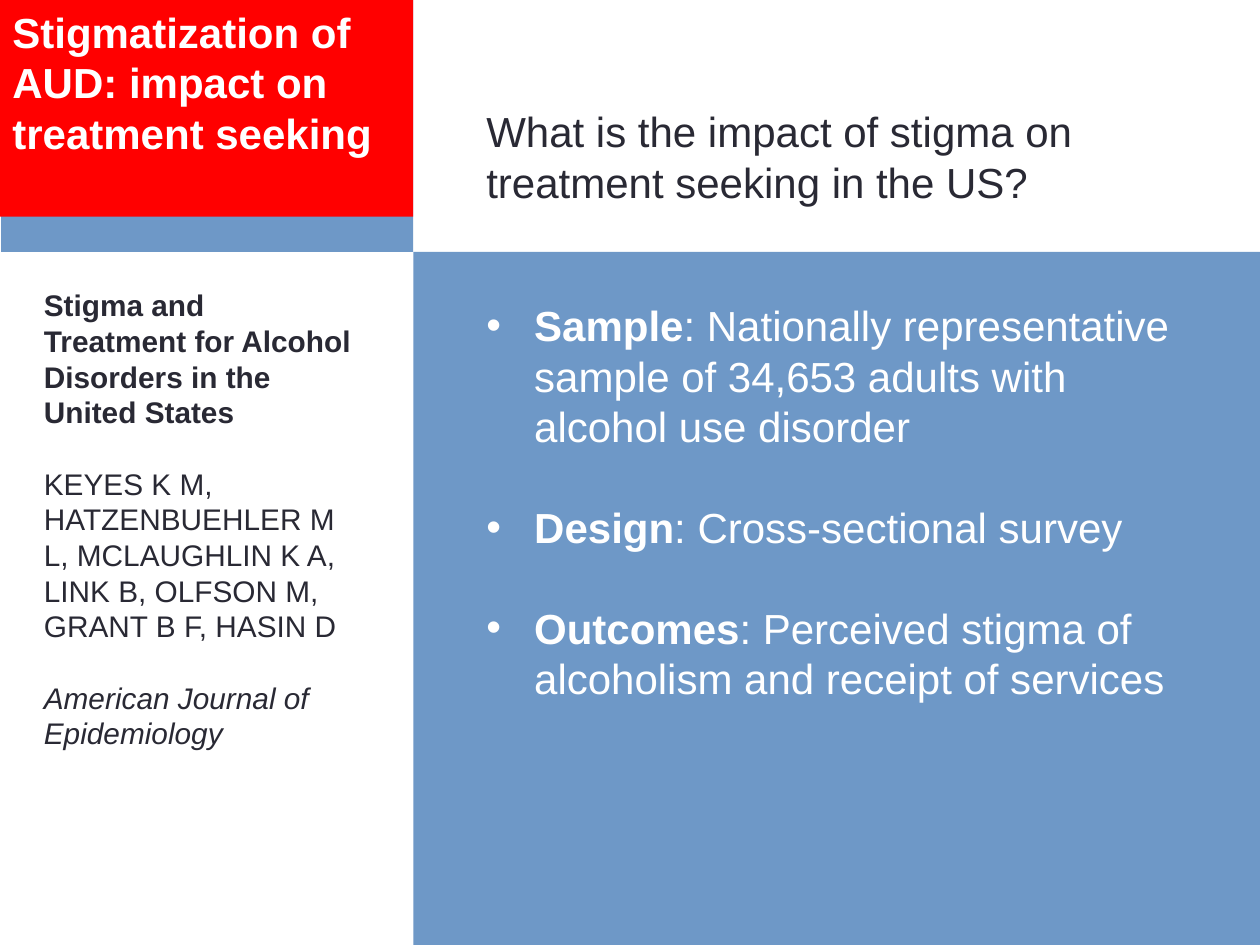
from dataclasses import dataclass

from lxml import etree
from pptx import Presentation
from pptx import util as u
from pptx.dml.color import RGBColor
from pptx.enum import shapes, text
from pptx.oxml import ns


@dataclass(frozen=True)
class Theme:
    font: str = "Arial"
    large: int = 24
    small: int = 17
    leading: float = 1.2
    red: str = "FF0000"
    blue: str = "6E98C7"
    white: str = "FFFFFF"
    dark: str = "292934"


THEME = Theme()
WIDTH, HEIGHT = 10, 7.5
SIDEBAR = 3.28       # width of the left column
HEADER = 2           # height of the top row
BANNER = 1.72        # red part of the top row
CONTENT = 3.76       # left edge of the main text
HANG = 0.38

# Each paragraph is a list of (wording, style) spans.
TOPIC = [[("Stigmatization of AUD: impact on treatment seeking", "bold")]]
QUESTION = [[("What is the impact of stigma on treatment seeking in the US?", "")]]
STUDY = [
    [("Sample", "bold"),
     (": Nationally representative sample of 34,653 adults with alcohol use disorder", "")],
    [("Design", "bold"), (": Cross-sectional survey", "")],
    [("Outcomes", "bold"), (": Perceived stigma of alcoholism and receipt of services", "")],
]
CITATION = [
    [("Stigma and Treatment for Alcohol Disorders in the United States", "bold")],
    [("KEYES K M, HATZENBUEHLER M L, MCLAUGHLIN K A, LINK B, OLFSON M, "
      "GRANT B F, HASIN D", "")],
    [("American Journal of Epidemiology", "italic")],
]


def place(shape, left, top, width, height):
    shape.left, shape.top = u.Inches(left), u.Inches(top)
    shape.width, shape.height = u.Inches(width), u.Inches(height)


def add_panel(page, color, left, top, width, height):
    """Add a plain rectangle behind the placeholders."""
    panel = page.shapes.add_shape(shapes.MSO_SHAPE.RECTANGLE, 0, 0, 0, 0)
    place(panel, left, top, width, height)
    panel.shadow.inherit = False
    panel.fill.solid()
    panel.fill.fore_color.rgb = RGBColor.from_string(color)
    panel.line.fill.background()
    page.shapes.title.element.addprevious(panel.element)
    return panel


def add_bullet(para):
    props = para._p.get_or_add_pPr()
    props.set("marL", str(u.Inches(HANG)))
    props.set("indent", str(-u.Inches(HANG)))
    etree.SubElement(props, ns.qn("a:buFont")).set("typeface", THEME.font)
    etree.SubElement(props, ns.qn("a:buChar")).set("char", "•")


def write(shape, paragraphs, size, color, bulleted=False):
    """Fill a shape with styled paragraphs set one line apart."""
    frame = shape.text_frame
    frame.word_wrap = True
    frame.auto_size = text.MSO_AUTO_SIZE.NONE
    frame.vertical_anchor = text.MSO_ANCHOR.TOP
    line = u.Pt(size * THEME.leading)
    for index, spans in enumerate(paragraphs):
        para = frame.add_paragraph() if index else frame.paragraphs[0]
        para.alignment = text.PP_ALIGN.LEFT
        para.line_spacing = line
        para.space_before = line if index else u.Pt(0)
        if bulleted:
            add_bullet(para)
        for wording, style in spans:
            span = para.add_run()
            span.text = wording
            span.font.name = THEME.font
            span.font.size = u.Pt(size)
            span.font.bold = style == "bold"
            span.font.italic = style == "italic"
            span.font.color.rgb = RGBColor.from_string(color)


def main():
    deck = Presentation()
    deck.slide_width, deck.slide_height = u.Inches(WIDTH), u.Inches(HEIGHT)
    page = deck.slides.add_slide(deck.slide_layouts[1])
    question, study = page.shapes.title, page.placeholders[1]

    add_panel(page, THEME.blue, 0.01, 0, SIDEBAR - 0.01, HEADER)
    banner = add_panel(page, THEME.red, 0, 0, SIDEBAR, BANNER)
    add_panel(page, THEME.blue, SIDEBAR, HEADER, WIDTH - SIDEBAR, HEIGHT - HEADER)
    write(banner, TOPIC, THEME.large, THEME.white)

    place(question, CONTENT, 0.79, 5.99, 0.91)
    write(question, QUESTION, THEME.large, THEME.dark)
    place(study, CONTENT, 2.33, 5.82, 3.33)
    write(study, STUDY, THEME.large, THEME.white, bulleted=True)

    citation = page.shapes.add_textbox(0, 0, 0, 0)
    place(citation, 0.25, 2.23, 2.66, 3.82)
    write(citation, CITATION, THEME.small, THEME.dark)

    deck.save("out.pptx")


if __name__ == "__main__":
    main()
